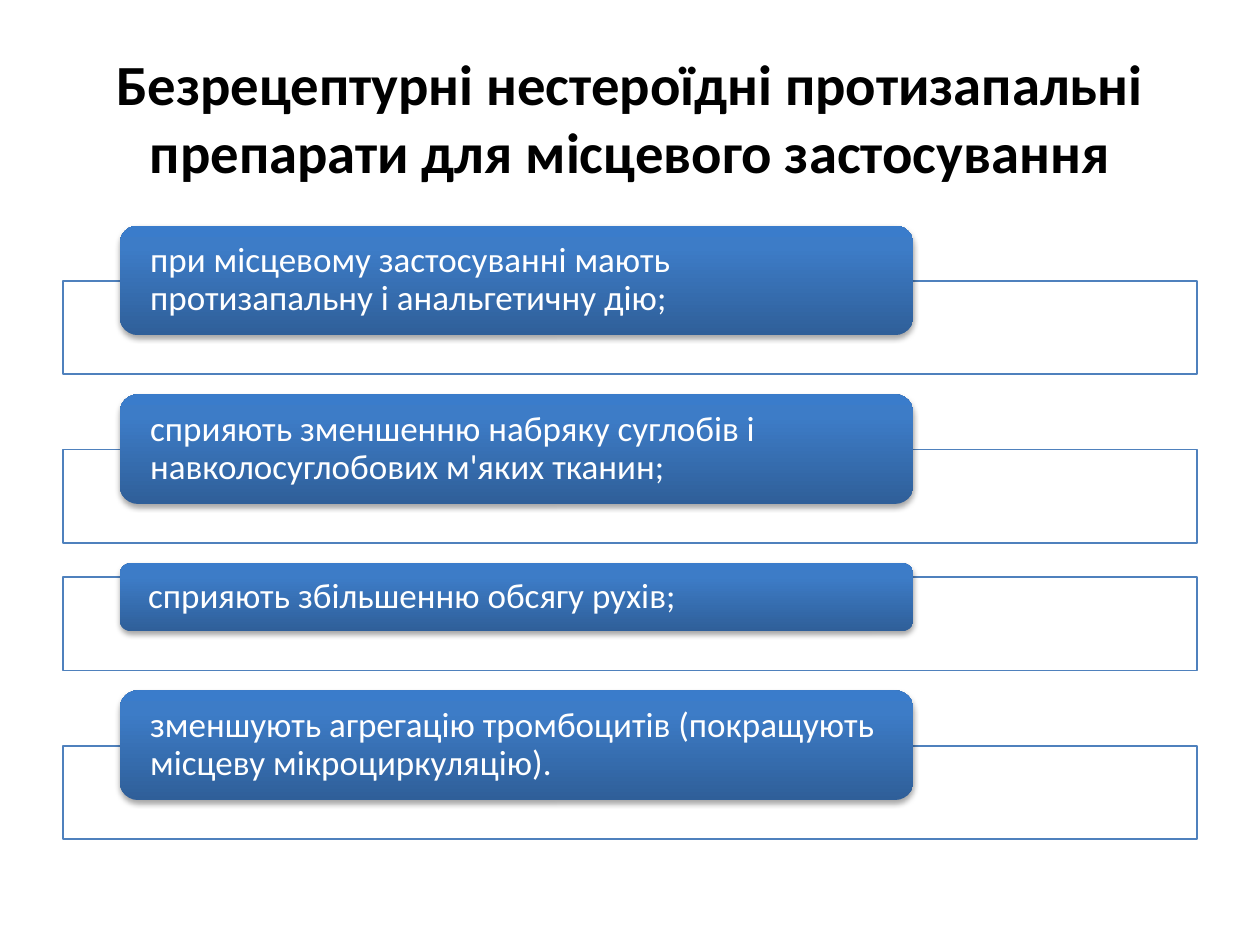
from lxml import etree
from pptx import Presentation
from pptx import util as u
from pptx.dml.color import RGBColor
from pptx.enum import shapes, text
from pptx.oxml import ns


def rgb(value):
    return RGBColor.from_string(value)


def add(parent, tag, **attrs):
    return etree.SubElement(parent, ns.qn(tag), {k: str(v) for k, v in attrs.items()})


prs = Presentation()
prs.slide_width, prs.slide_height = u.Inches(10), u.Inches(7.5)
s = prs.slides.add_slide(prs.slide_layouts[5])

title = s.shapes.title
title.left, title.top = u.Inches(0.5), u.Inches(0.3)
title.width, title.height = u.Inches(9), u.Inches(1.25)
tf = title.text_frame
tf.auto_size = text.MSO_AUTO_SIZE.NONE
tf.vertical_anchor = text.MSO_ANCHOR.MIDDLE
p = tf.paragraphs[0]
p.alignment = text.PP_ALIGN.CENTER
r = p.add_run()
r.text = "Безрецептурні нестероїдні протизапальні препарати для місцевого застосування"
r.font.name, r.font.size, r.font.bold = "Calibri", u.Pt(32.4), True
r.font.color.rgb = rgb("000000")

items = [
    ("при місцевому застосуванні мають протизапальну і анальгетичну дію;", 0.87),
    ("сприяють зменшенню набряку суглобів і навколосуглобових м'яких тканин;", 0.87),
    ("сприяють збільшенню обсягу рухів;", 0.54),
    ("зменшують агрегацію тромбоцитів (покращують місцеву мікроциркуляцію).", 0.87),
]
stops = [(0, "2F5F99"), (80, "3D7CC7"), (100, "3A7CCB")]
frame_height, overhang, gap = 0.74, 0.31, 0.16

top = 1.79
for label, height in items:
    bottom = top + height + overhang
    frame = s.shapes.add_shape(
        shapes.MSO_SHAPE.RECTANGLE, u.Inches(0.5), u.Inches(bottom - frame_height),
        u.Inches(9), u.Inches(frame_height))
    frame.shadow.inherit = False
    frame.fill.solid()
    frame.fill.fore_color.rgb = rgb("FFFFFF")
    add(frame.fill.fore_color._xFill.find(ns.qn("a:srgbClr")), "a:alpha", val=90000)
    frame.line.color.rgb = rgb("4F81BD")
    frame.line.width = u.Pt(0.75)

    sp = s.shapes.add_shape(
        shapes.MSO_SHAPE.ROUNDED_RECTANGLE, u.Inches(0.95), u.Inches(top),
        u.Inches(6.3), u.Inches(height))
    sp.line.fill.background()
    sp.fill.gradient()
    sp.fill.gradient_angle = 90
    gs_list = sp._element.spPr.find(".//" + ns.qn("a:gsLst"))
    for gs in list(gs_list):
        gs_list.remove(gs)
    for position, color in stops:
        add(add(gs_list, "a:gs", pos=position * 1000), "a:srgbClr", val=color)
    sp.shadow.inherit = False
    shadow = add(sp._element.spPr.find(ns.qn("a:effectLst")), "a:outerShdw",
                 blurRad=u.Pt(3.1), dist=u.Pt(1.8), dir=5400000, rotWithShape=0)
    add(add(shadow, "a:srgbClr", val="000000"), "a:alpha", val=35000)

    tf = sp.text_frame
    tf.word_wrap = True
    tf.vertical_anchor = text.MSO_ANCHOR.MIDDLE
    tf.margin_left = tf.margin_right = u.Inches(0.2)
    tf.margin_top = tf.margin_bottom = 0
    p = tf.paragraphs[0]
    p.alignment = text.PP_ALIGN.LEFT
    p.line_spacing = 0.9
    r = p.add_run()
    r.text = label
    r.font.name, r.font.size = "Calibri", u.Pt(20)
    r.font.color.rgb = rgb("FFFFFF")
    top = bottom + gap

prs.save("out.pptx")
